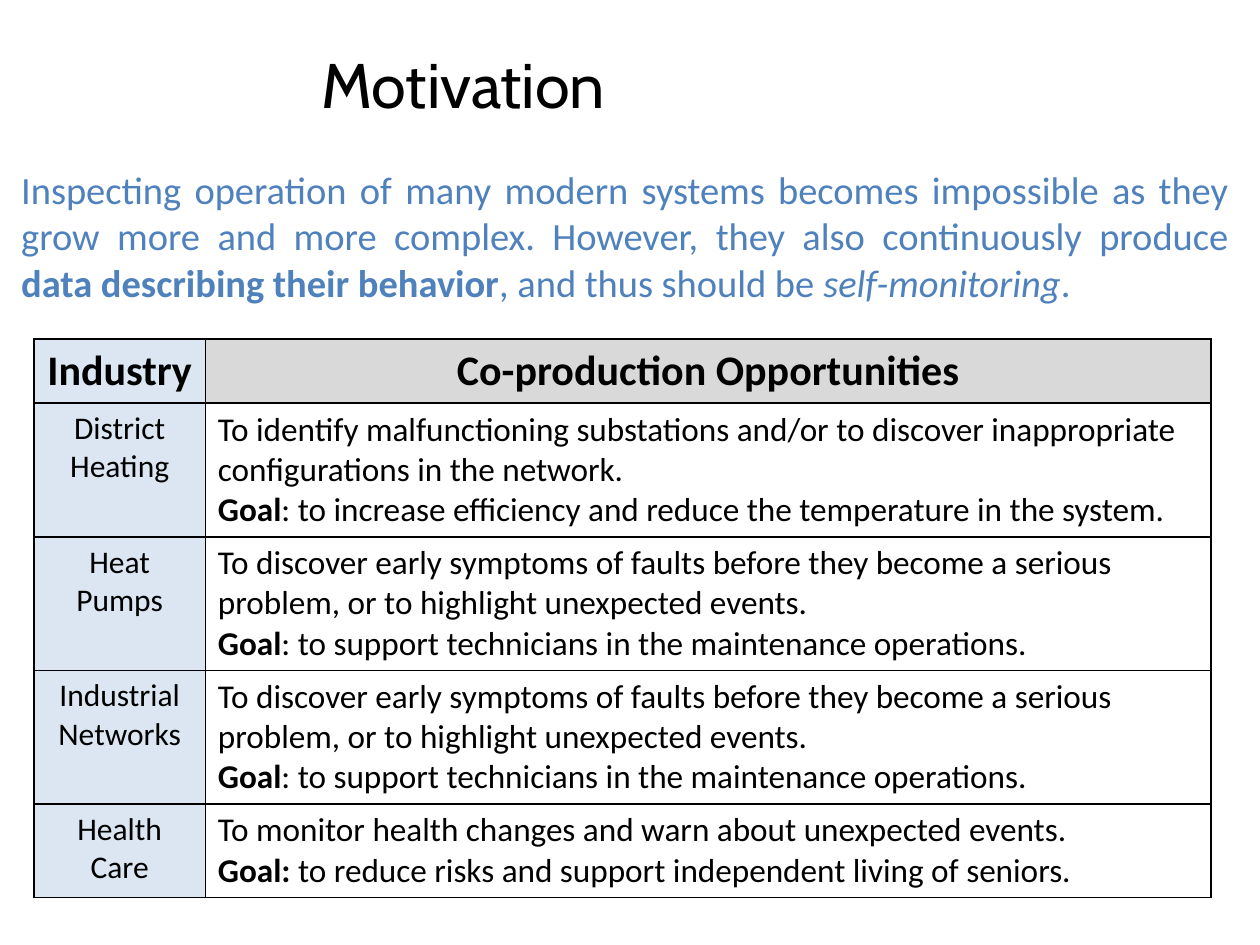
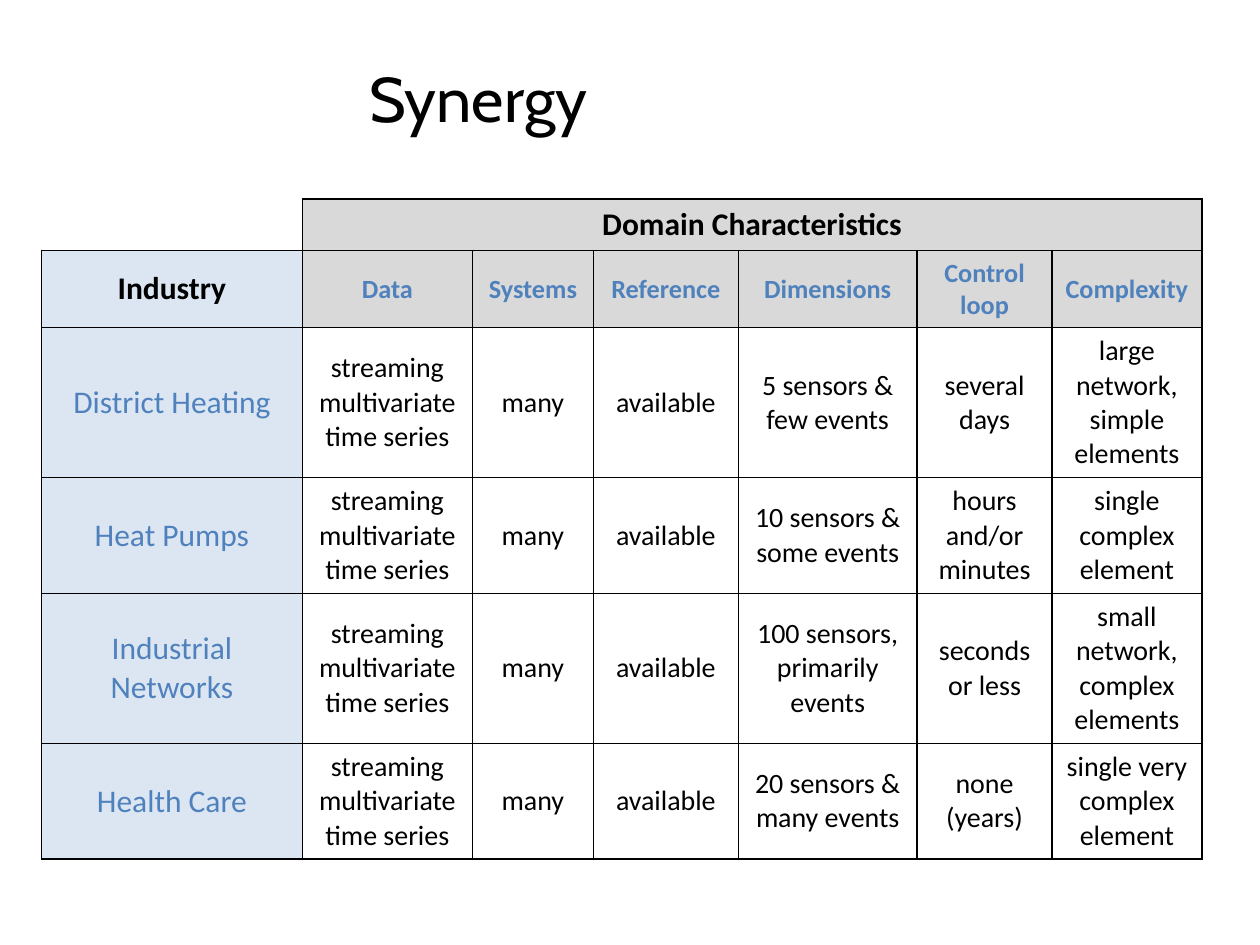
import pptx
import pptx.util
import pptx.dml.color
import pptx.enum.shapes
import pptx.enum.text
import pptx.oxml
from dataclasses import dataclass
from lxml import etree

ALIGN = pptx.enum.text.PP_ALIGN
ANCHOR = pptx.enum.text.MSO_ANCHOR
BOLD, ITALIC = "bold", "italic"


@dataclass(frozen=True)
class Theme:
    black: str = "000000"
    white: str = "FFFFFF"
    blue: str = "4F81BD"
    pale_blue: str = "DCE6F2"
    grey: str = "D9D9D9"
    title_font: str = "Cabin"
    body_font: str = "Calibri"
    title: int = 36
    heading: int = 24
    intro: int = 22
    goal: int = 19
    label: int = 18
    value: int = 16
    column: int = 15
    border: int = 1


THEME = Theme()
SLIDE_W, SLIDE_H = 10, 7.5
TITLE_W, TITLE_H = 4.44, 0.82

INTRO = [
    ("Inspecting operation of many modern systems becomes impossible as they grow "
     "more and more complex. However, they also continuously produce ", None),
    ("data describing their behavior", BOLD),
    (", and thus should be ", None),
    ("self-monitoring", ITALIC),
    (".", None),
]
EARLY_FAULTS = (
    "To discover early symptoms of faults before they become a serious problem, "
    "or to highlight unexpected events.",
    [("Goal", BOLD), (": to support technicians in the maintenance operations.", None)],
)
OPPORTUNITY_HEADS = ["Industry", "Co-production Opportunities"]
OPPORTUNITIES = [
    ("District Heating", (
        "To identify malfunctioning substations and/or to discover inappropriate "
        "configurations in the network.",
        [("Goal", BOLD),
         (": to increase efficiency and reduce the temperature in the system.", None)])),
    ("Heat\nPumps", EARLY_FAULTS),
    ("Industrial Networks", EARLY_FAULTS),
    ("Health\nCare", (
        "To monitor health changes and warn about unexpected events.",
        [("Goal:", BOLD),
         (" to reduce risks and support independent living of seniors.", None)])),
]

GROUP_HEAD = "Domain Characteristics"
DOMAIN_HEADS = ["Industry", "Data", "Systems", "Reference", "Dimensions",
                "Control loop", "Complexity"]
SHARED_VALUES = [("streaming multivariate", "time series"), "many", "available"]
DOMAINS = [
    ("District Heating", "5 sensors & few events", "several days",
     "large network, simple elements"),
    ("Heat Pumps", "10 sensors & some events", "hours and/or minutes",
     "single complex element"),
    ("Industrial Networks", "100 sensors, primarily events", "seconds or less",
     "small network, complex elements"),
    ("Health Care", "20 sensors & many events", "none (years)",
     "single very complex element"),
]


def inches(*lengths):
    return [pptx.util.Inches(n) for n in lengths]


def rgb(value):
    return pptx.dml.color.RGBColor.from_string(value)


def write(tf, text, size, color=THEME.black, font=THEME.body_font, bold=False,
          align=ALIGN.LEFT):
    paragraphs = text if isinstance(text, tuple) else (text,)
    for i, content in enumerate(paragraphs):
        p = tf.paragraphs[0] if i == 0 else tf.add_paragraph()
        p.alignment = align
        runs = [(content, None)] if isinstance(content, str) else content
        for words, style in runs:
            for j, line in enumerate(words.split("\n")):
                if j:
                    p.add_line_break()
                r = p.add_run()
                r.text = line
                r.font.size = pptx.util.Pt(size)
                r.font.name = font
                r.font.color.rgb = rgb(color)
                r.font.bold = bold or style == BOLD
                r.font.italic = style == ITALIC


def add_titled_slide(prs, title, left, top):
    s = prs.slides.add_slide(prs.slide_layouts[5])
    sp = s.shapes.title
    sp.left, sp.top, sp.width, sp.height = inches(left, top, TITLE_W, TITLE_H)
    tf = sp.text_frame
    tf.auto_size = pptx.enum.text.MSO_AUTO_SIZE.NONE
    tf.vertical_anchor = ANCHOR.MIDDLE
    write(tf, title, THEME.title, font=THEME.title_font)
    return s


def add_grid(s, left, top, widths, heights):
    box = inches(left, top, sum(widths), sum(heights))
    table = s.shapes.add_table(len(heights), len(widths), *box).table
    table.first_row = table.horz_banding = False
    for column, width in zip(table.columns, widths):
        column.width = pptx.util.Inches(width)
    for row, height in zip(table.rows, heights):
        row.height = pptx.util.Inches(height)
    return table


def set_borders(cell, sides):
    tc_pr = cell._tc.get_or_add_tcPr()
    qn = pptx.oxml.ns.qn
    for side in "LRTB":
        ln = etree.SubElement(tc_pr, qn(f"a:ln{side}"),
                              w=str(pptx.util.Pt(THEME.border)))
        if side in sides:
            fill = etree.SubElement(ln, qn("a:solidFill"))
            etree.SubElement(fill, qn("a:srgbClr"), val=THEME.black)
        else:
            etree.SubElement(ln, qn("a:noFill"))


def fill_cell(cell, text, size, fill=THEME.white, anchor=ANCHOR.TOP, **fmt):
    set_borders(cell, "LRTB")
    cell.fill.solid()
    cell.fill.fore_color.rgb = rgb(fill)
    cell.vertical_anchor = anchor
    write(cell.text_frame, text, size, **fmt)


def add_intro(s):
    sp = s.shapes.add_shape(pptx.enum.shapes.MSO_SHAPE.RECTANGLE,
                            *inches(0.07, 1.27, 9.78, 1.21))
    sp.shadow.inherit = False
    sp.fill.background()
    sp.line.color.rgb = rgb(THEME.white)
    sp.line.width = pptx.util.Pt(0.75)
    tf = sp.text_frame
    tf.word_wrap = True
    tf.vertical_anchor = ANCHOR.TOP
    write(tf, INTRO, THEME.intro, THEME.blue, align=ALIGN.JUSTIFY)


def build_motivation(prs):
    s = add_titled_slide(prs, "Motivation", 2.45, 0.25)
    table = add_grid(s, 0.27, 2.69, [1.36, 7.98], [0.51] + [1.06] * 3 + [0.74])
    for c, fill in enumerate([THEME.pale_blue, THEME.grey]):
        fill_cell(table.cell(0, c), OPPORTUNITY_HEADS[c], THEME.heading, fill,
                  bold=True, align=ALIGN.CENTER)
    for r, (industry, opportunity) in enumerate(OPPORTUNITIES, 1):
        fill_cell(table.cell(r, 0), industry, THEME.label, THEME.pale_blue,
                  align=ALIGN.CENTER)
        fill_cell(table.cell(r, 1), opportunity, THEME.goal)
    add_intro(s)


def build_synergy(prs):
    s = add_titled_slide(prs, "Synergy", 2.83, 0.36)
    table = add_grid(s, 0.33, 1.58, [2.07, 1.35, 0.96, 1.15, 1.42, 1.07, 1.19],
                     [0.41, 0.6] + [1.19, 0.92] * 2)
    middle = dict(anchor=ANCHOR.MIDDLE, align=ALIGN.CENTER)

    corner = table.cell(0, 0)
    set_borders(corner, "RB")
    corner.fill.background()
    group = table.cell(0, 1)
    group.merge(table.cell(0, 6))
    fill_cell(group, GROUP_HEAD, THEME.label, THEME.grey, bold=True, **middle)
    for c in range(2, 7):
        set_borders(table.cell(0, c), "LRTB")

    for c, head in enumerate(DOMAIN_HEADS):
        look = ((THEME.column, THEME.grey, THEME.blue) if c
                else (THEME.label, THEME.pale_blue, THEME.black))
        size, fill, color = look
        fill_cell(table.cell(1, c), head, size, fill, color=color, bold=True, **middle)
    for r, (industry, *values) in enumerate(DOMAINS, 2):
        fill_cell(table.cell(r, 0), industry, THEME.label, THEME.pale_blue,
                  color=THEME.blue, **middle)
        for c, value in enumerate(SHARED_VALUES + values, 1):
            fill_cell(table.cell(r, c), value, THEME.value, **middle)


def main():
    prs = pptx.Presentation()
    prs.slide_width, prs.slide_height = inches(SLIDE_W, SLIDE_H)
    build_motivation(prs)
    build_synergy(prs)
    prs.save("out.pptx")


if __name__ == "__main__":
    main()
